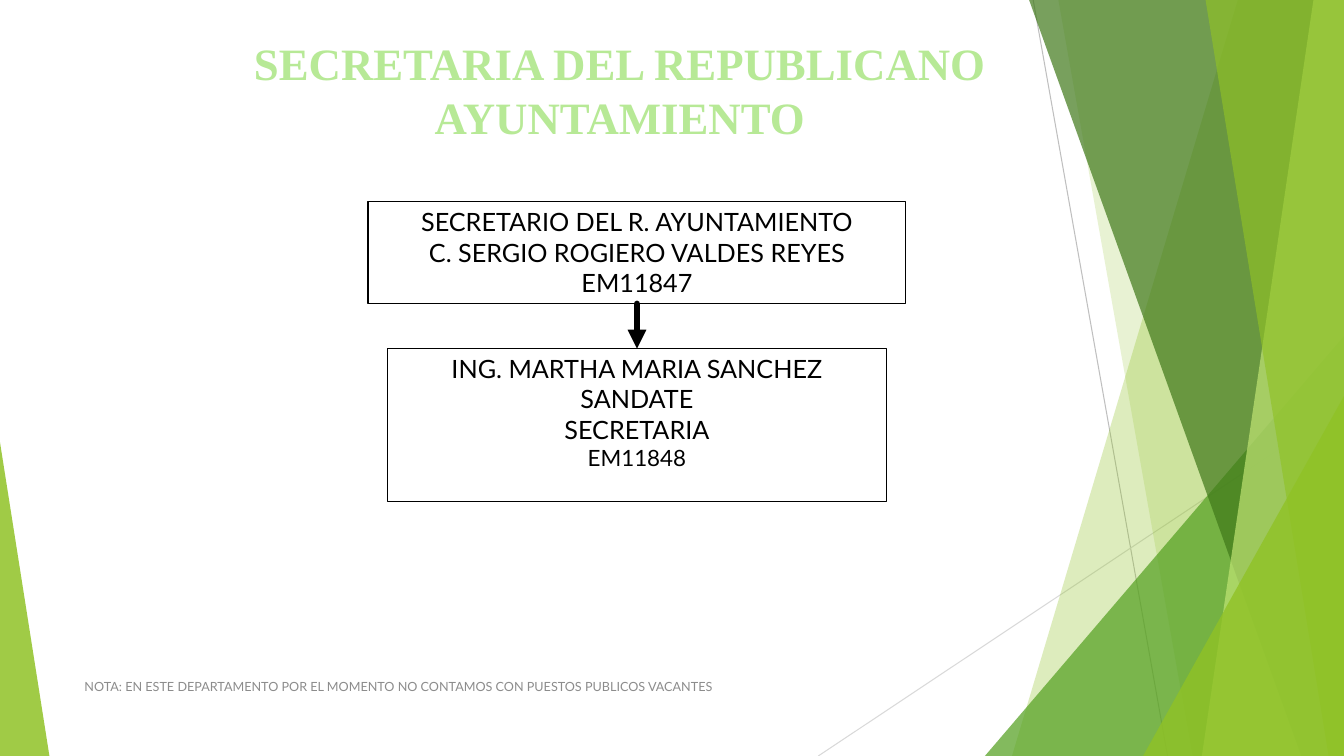
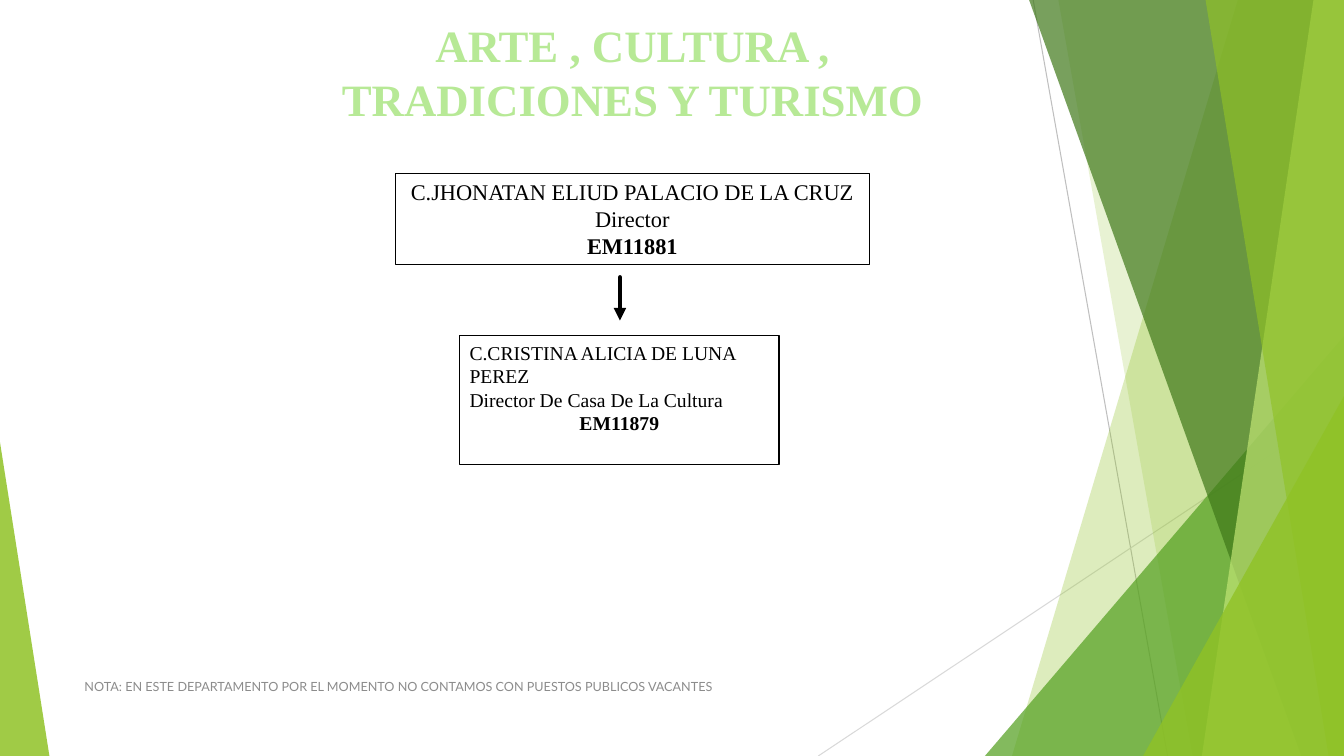
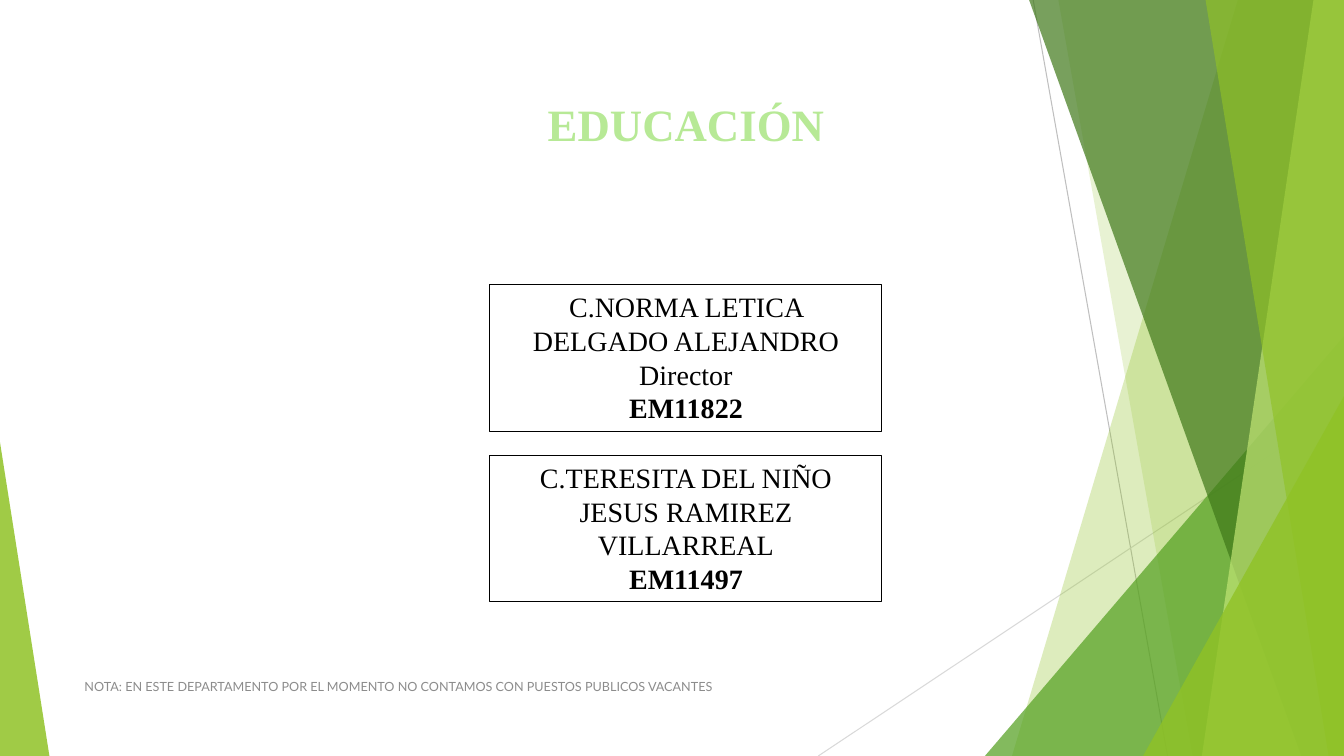
from lxml import etree
from pptx import Presentation
from pptx.dml.color import RGBColor
from pptx.enum import shapes, text
from pptx.oxml.ns import qn
from pptx.util import Pt

GREEN = RGBColor(0x90, 0xC2, 0x26)
MID_GREEN = RGBColor(0x54, 0xA0, 0x21)
DARK_GREEN = RGBColor(0x3F, 0x78, 0x19)
PALE_GREEN = RGBColor(0xC0, 0xE4, 0x74)
TITLE_GREEN = RGBColor(0xB7, 0xE9, 0x96)
GRAY = RGBColor(0xBF, 0xBF, 0xBF)
LIGHT_GRAY = RGBColor(0xD9, 0xD9, 0xD9)
NOTE_GRAY = RGBColor(0x8C, 0x8C, 0x8C)
BLACK = RGBColor(0, 0, 0)
WHITE = RGBColor(0xFF, 0xFF, 0xFF)

SANS = "Lato"
SERIF = "Times New Roman"
WIDTH, HEIGHT = 960, 540
LEFT, CENTER = text.PP_ALIGN.LEFT, text.PP_ALIGN.CENTER
NOTE = "NOTA: EN ESTE DEPARTAMENTO POR EL MOMENTO NO CONTAMOS CON PUESTOS PUBLICOS VACANTES"


class Deck:
    def __init__(self):
        self.prs = Presentation()
        self.prs.slide_width, self.prs.slide_height = Pt(WIDTH), Pt(HEIGHT)
        self.layout = self.prs.slide_layouts[5]
        for ph in list(self.layout.placeholders):
            if ph.placeholder_format.type != shapes.PP_PLACEHOLDER.TITLE:
                ph.element.getparent().remove(ph.element)
        self.s = None

    def slide(self, title, at, space_below):
        self.s = self.prs.slides.add_slide(self.layout)
        if len(self.prs.slides) == 1:
            self.backdrop()
        self.title(title, at, space_below)
        self.note()

    def backdrop(self):
        group = self.s.shapes.add_group_shape()
        self.line(group.shapes, (738, 0), (834, HEIGHT), GRAY, 0.75)
        self.line(group.shapes, (WIDTH, 290), (584.5, HEIGHT), LIGHT_GRAY, 0.75)
        self.band(group.shapes, 884.2, 722.9, GREEN, 30)
        self.band(group.shapes, 756, 851.8, GREEN, 20)
        self.triangle(group.shapes, 703.5, 240, 256.5, 1, MID_GREEN, 72)
        self.band(group.shapes, 735.1, 929.5, DARK_GREEN, 70)
        self.band(group.shapes, 938.2, 858.5, PALE_GREEN, 70)
        self.band(group.shapes, 861.1, 949, GREEN, 65)
        self.triangle(group.shapes, 816.5, 283, 143.5, 1, GREEN, 80)
        self.triangle(group.shapes, 0, 316, 35.3, 0, GREEN, 85)
        self.layout.shapes.element.insert(2, group.element)

    def band(self, parent, top_x, bottom_x, color, opacity):
        points = [(Pt(x), Pt(y)) for x, y in
                  ((top_x, 0), (WIDTH, 0), (WIDTH, HEIGHT), (bottom_x, HEIGHT))]
        builder = parent.build_freeform(*points[0])
        builder.add_line_segments(points[1:], close=True)
        self.tint(builder.convert_to_shape(), color, opacity)

    def triangle(self, parent, left, top, width, apex, color, opacity):
        sp = parent.add_shape(shapes.MSO_SHAPE.ISOSCELES_TRIANGLE,
                              Pt(left), Pt(top), Pt(width), Pt(HEIGHT - top))
        sp.adjustments[0] = apex
        self.tint(sp, color, opacity)

    def tint(self, sp, color, opacity):
        sp.shadow.inherit = False
        sp.fill.solid()
        sp.fill.fore_color.rgb = color
        clr = next(sp.element.spPr.iter(qn("a:srgbClr")))
        etree.SubElement(clr, qn("a:alpha"), val=str(opacity * 1000))
        sp.line.fill.background()

    def line(self, parent, start, end, color, weight):
        cxn = parent.add_connector(shapes.MSO_CONNECTOR.STRAIGHT,
                                   *(Pt(v) for v in start + end))
        cxn.line.color.rgb = color
        cxn.line.width = Pt(weight)
        etree.SubElement(cxn.element.spPr, qn("a:effectLst"))
        return cxn

    def arrow(self, start, end, weight):
        cxn = self.line(self.s.shapes, start, end, BLACK, weight)
        ln = cxn.element.spPr.find(qn("a:ln"))
        ln.set("cap", "rnd")
        etree.SubElement(ln, qn("a:tailEnd"), type="triangle")
        return cxn

    def join(self, upper, lower, weight):
        x = upper.left.pt + upper.width.pt / 2
        cxn = self.arrow((x, upper.top.pt + upper.height.pt), (x, lower.top.pt), weight)
        cxn.begin_connect(upper, 2)
        cxn.end_connect(lower, 0)

    def style(self, p, font, size, color, align=LEFT, bold=False):
        p.alignment = align
        for r in p.runs:
            r.font.name, r.font.size, r.font.bold = font, Pt(size), bold
            r.font.color.rgb = color

    def title(self, words, at, space_below):
        sp = self.s.shapes.title
        sp.left, sp.top, sp.width, sp.height = (Pt(v) for v in at)
        tf = sp.text_frame
        tf.text = words
        tf.word_wrap = True
        tf.auto_size = text.MSO_AUTO_SIZE.NONE
        tf.vertical_anchor = text.MSO_ANCHOR.MIDDLE
        tf.margin_bottom = Pt(3.6 + space_below)
        self.style(tf.paragraphs[0], SERIF, 32, TITLE_GREEN, CENTER, True)
        for rpr in sp.element.iter(qn("a:rPr")):
            ln = etree.Element(qn("a:ln"), w=str(Pt(1.75)))
            fill = etree.SubElement(ln, qn("a:solidFill"))
            etree.SubElement(fill, qn("a:srgbClr"), val=str(MID_GREEN))
            rpr.insert(0, ln)

    def note(self):
        sp = self.s.shapes.add_textbox(Pt(53.3), Pt(476), Pt(496), Pt(28.8))
        tf = sp.text_frame
        tf.text = NOTE
        tf.word_wrap = True
        tf.vertical_anchor = text.MSO_ANCHOR.MIDDLE
        self.style(tf.paragraphs[0], SANS, 9, NOTE_GRAY)

    def box(self, at, lines, font, size, fill=None, weight=0.75,
            align=CENTER, code_size=None, code_bold=True):
        sp = self.s.shapes.add_shape(shapes.MSO_SHAPE.RECTANGLE, *(Pt(v) for v in at))
        sp.shadow.inherit = False
        if fill is None:
            sp.fill.background()
        else:
            sp.fill.solid()
            sp.fill.fore_color.rgb = fill
        sp.line.color.rgb = BLACK
        sp.line.width = Pt(weight)
        tf = sp.text_frame
        tf.text = "\n".join(lines)
        tf.word_wrap = True
        tf.vertical_anchor = text.MSO_ANCHOR.TOP
        for p in tf.paragraphs[:-1]:
            self.style(p, font, size, BLACK, align)
        self.style(tf.paragraphs[-1], font, code_size or size, BLACK, CENTER, code_bold)
        return sp


def main():
    deck = Deck()

    deck.slide("SECRETARIA DEL REPUBLICANO AYUNTAMIENTO", (131, 21.6, 623.5, 106.6), 21.6)
    secretario = deck.box(
        (263, 144, 384, 73),
        ["SECRETARIO DEL R. AYUNTAMIENTO", "C. SERGIO ROGIERO VALDES REYES", "EM11847"],
        SANS, 18, fill=WHITE, weight=1, code_bold=False)
    secretaria = deck.box(
        (276.5, 249, 357, 109),
        ["ING. MARTHA MARIA SANCHEZ SANDATE", "SECRETARIA", "EM11848"],
        SANS, 18, code_size=16, code_bold=False)
    deck.join(secretario, secretaria, 4.5)

    deck.slide("ARTE , CULTURA , TRADICIONES Y TURISMO", (229, 8.6, 445.7, 123.8), 38.4)
    deck.box((282.2, 123.8, 339, 65.5),
             ["C.JHONATAN ELIUD PALACIO DE LA CRUZ", "Director", "EM11881"], SERIF, 16)
    deck.box((328.3, 239.8, 228.2, 92.2),
             ["C.CRISTINA ALICIA DE LUNA PEREZ", "Director De Casa De La Cultura", "EM11879"],
             SERIF, 14, align=LEFT)
    deck.arrow((442.8, 198), (442.8, 229), 3)

    deck.slide("EDUCACIÓN", (333.4, 64.8, 313.2, 85), 38.4)
    staff = [["C.NORMA LETICA DELGADO ALEJANDRO", "Director", "EM11822"],
             ["C.TERESITA DEL NIÑO JESUS RAMIREZ VILLARREAL", "EM11497"]]
    for i, lines in enumerate(staff):
        deck.box((350, 203.5 + 122 * i, 280, 104.4), lines, SERIF, 20)

    deck.prs.save("out.pptx")


if __name__ == "__main__":
    main()
